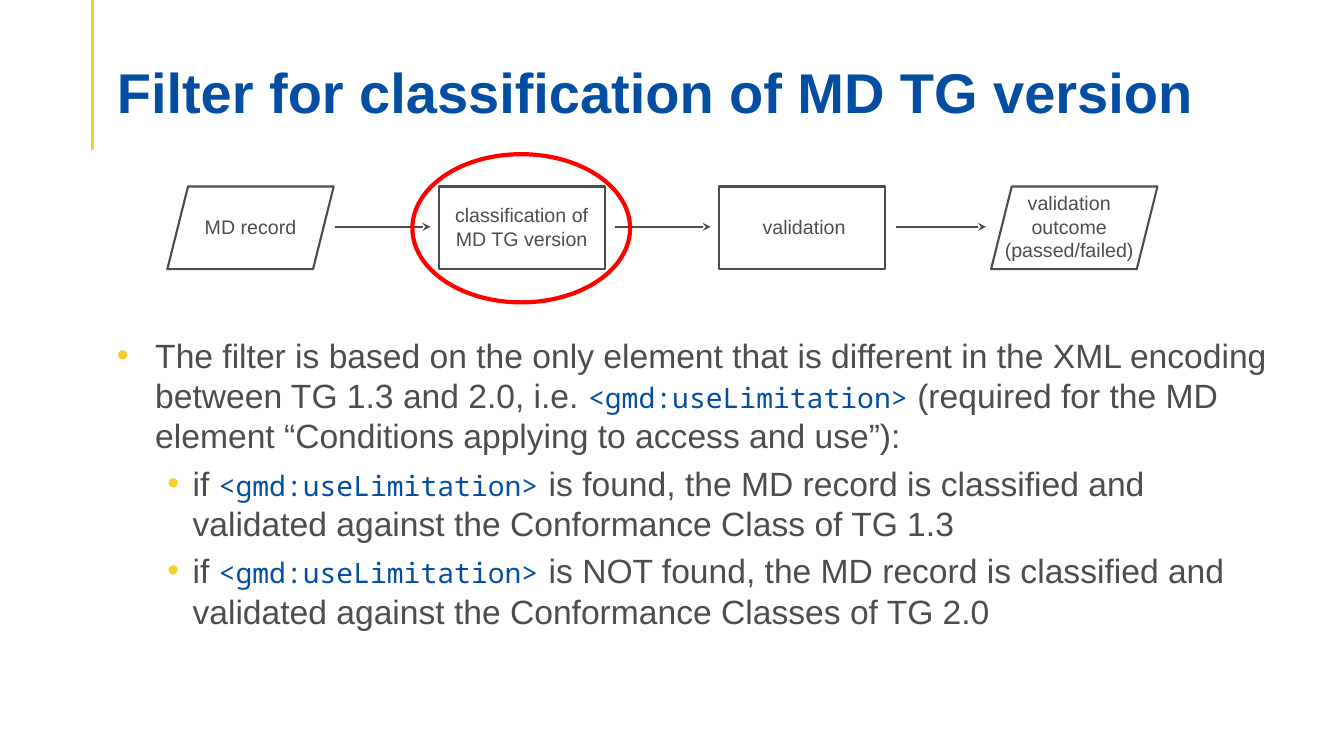
from lxml import etree
from pptx import Presentation
from pptx.dml.color import RGBColor
from pptx.enum.shapes import MSO_CONNECTOR, MSO_SHAPE
from pptx.enum.text import MSO_ANCHOR, MSO_AUTO_SIZE, PP_ALIGN
from pptx.oxml.ns import qn
from pptx.util import Inches, Pt

BOX, SLANTED, OVAL = MSO_SHAPE.RECTANGLE, MSO_SHAPE.PARALLELOGRAM, MSO_SHAPE.OVAL
STRAIGHT = MSO_CONNECTOR.STRAIGHT
COLORS = {"blue": "034EA2", "gray": "4D4D4D", "yellow": "F8CC29", "red": "FF0000"}

TITLE = "Filter for classification of MD TG version"
CODE = "<gmd:useLimitation>"
# Indent level, then runs as (text, style)
BULLETS = [
    (0, [("The filter is based on the only element that is different in the XML "
          "encoding between TG 1.3 and 2.0, i.e. ", "text"),
         (CODE, "code"),
         (" (required for the MD element “Conditions applying to access and use”):",
          "text")]),
    (1, [("if ", "text"), (CODE, "code"), (" ", "gap"),
         ("is found, the MD record is classified and validated against the "
          "Conformance Class of TG 1.3", "text")]),
    (1, [("if ", "text"), (CODE, "code"), (" ", "gap"),
         ("is NOT found, the MD record is classified and validated against the "
          "Conformance Classes of TG 2.0", "text")]),
]
RUN_STYLES = {"code": ("Noto Sans Mono", 20, "blue"), "gap": ("Noto Sans Mono", 12, "blue")}
INDENTS = [(0.38, -0.38), (0.75, -0.25)]

# Outline, left edge, label, label lines, label width, label shift
STEPS = [
    (SLANTED, 1.66, "MD record", 1, 1.35, 0),
    (BOX, 4.35, "classification of MD TG version", 2, 1.66, 0),
    (BOX, 7.13, "validation", 1, 1.35, 0.02),
    (SLANTED, 9.83, "validation outcome (passed/failed)", 3, 1.51, -0.05),
]
ARROWS = [(3.32, 4.27), (6.1, 7.05), (8.89, 9.78)]
STEP_WIDTH, STEP_HEIGHT, FLOW_MIDDLE = 1.65, 0.82, 2.25
LINE_HEIGHT, LABEL_PADDING = 0.235, 0.1


def color(name):
    return RGBColor.from_string(COLORS[name])


def set_font(font, name, size, color_name, bold=None):
    font.name, font.size, font.bold = name, Pt(size), bold
    font.color.rgb = color(color_name)


def place(shape, *box):
    shape.left, shape.top, shape.width, shape.height = map(Inches, box)


def add_outline(slide, kind, box, line_color, width):
    shape = slide.shapes.add_shape(kind, *map(Inches, box))
    shape.shadow.inherit = False
    shape.fill.background()
    shape.line.color.rgb = color(line_color)
    shape.line.width = Pt(width)


def add_line(slide, start, end, line_color, width, arrow=False):
    line = slide.shapes.add_connector(STRAIGHT, *map(Inches, start + end))
    line.line.color.rgb = color(line_color)
    line.line.width = Pt(width)
    if arrow:
        etree.SubElement(line.line._get_or_add_ln(), qn("a:tailEnd"), type="stealth")
    etree.SubElement(line._element.spPr, qn("a:effectLst"))


def add_label(slide, text, center, lines, width):
    height = LABEL_PADDING + lines * LINE_HEIGHT
    box = (center - width / 2, FLOW_MIDDLE - height / 2, width, height)
    frame = slide.shapes.add_textbox(*map(Inches, box)).text_frame
    frame.word_wrap = True
    frame.auto_size = MSO_AUTO_SIZE.SHAPE_TO_FIT_TEXT
    paragraph = frame.paragraphs[0]
    paragraph.text = text
    paragraph.alignment = PP_ALIGN.CENTER
    set_font(paragraph.font, "Arial", 14, "gray")


def add_bullet(paragraph, level):
    paragraph.level = level
    properties = paragraph._p.get_or_add_pPr()
    margin, indent = INDENTS[level]
    properties.set("marL", str(Inches(margin)))
    properties.set("indent", str(Inches(indent)))
    bullet_color = etree.SubElement(properties, qn("a:buClr"))
    etree.SubElement(bullet_color, qn("a:srgbClr"), val=COLORS["yellow"])
    etree.SubElement(properties, qn("a:buFont"), typeface="Arial")
    etree.SubElement(properties, qn("a:buChar"), char="•")


def fill_title(title):
    place(title, 1.06, 0.39, 11.22, 0.86)
    frame = title.text_frame
    frame.auto_size = MSO_AUTO_SIZE.NONE
    frame.vertical_anchor = MSO_ANCHOR.BOTTOM
    frame.margin_bottom = 0
    paragraph = frame.paragraphs[0]
    paragraph.text = TITLE
    paragraph.alignment = PP_ALIGN.LEFT
    paragraph.line_spacing = 0.9
    set_font(paragraph.font, "Arial", 40, "blue", bold=True)


def fill_body(body):
    place(body, 1.06, 3.27, 11.64, 3.6)
    frame = body.text_frame
    frame.auto_size = MSO_AUTO_SIZE.NONE
    for index, (level, runs) in enumerate(BULLETS):
        paragraph = frame.add_paragraph() if index else frame.paragraphs[0]
        add_bullet(paragraph, level)
        paragraph.space_before = Pt(5 * level)
        set_font(paragraph.font, "Arial", 24, "gray")
        for text, style in runs:
            run = paragraph.add_run()
            run.text = text
            set_font(run.font, *RUN_STYLES.get(style, ("Arial", 24, "gray")))


def main():
    presentation = Presentation()
    presentation.slide_width, presentation.slide_height = Inches(13.33), Inches(7.5)
    slide = presentation.slides.add_slide(presentation.slide_layouts[1])
    fill_title(slide.shapes.title)
    fill_body(slide.placeholders[1])
    add_line(slide, (0.92, 0), (0.92, 1.49), "yellow", 2.25)

    step_top = FLOW_MIDDLE + 0.01 - STEP_HEIGHT / 2
    for kind, left, label, lines, width, shift in STEPS:
        add_outline(slide, kind, (left, step_top, STEP_WIDTH, STEP_HEIGHT), "gray", 1.5)
        add_label(slide, label, left + STEP_WIDTH / 2 + shift, lines, width)
    for start, end in ARROWS:
        add_line(slide, (start, FLOW_MIDDLE), (end, FLOW_MIDDLE), "gray", 1.5, arrow=True)
    add_outline(slide, OVAL, (4.09, 1.53, 2.16, 1.47), "red", 3)
    presentation.save("out.pptx")


if __name__ == "__main__":
    main()
